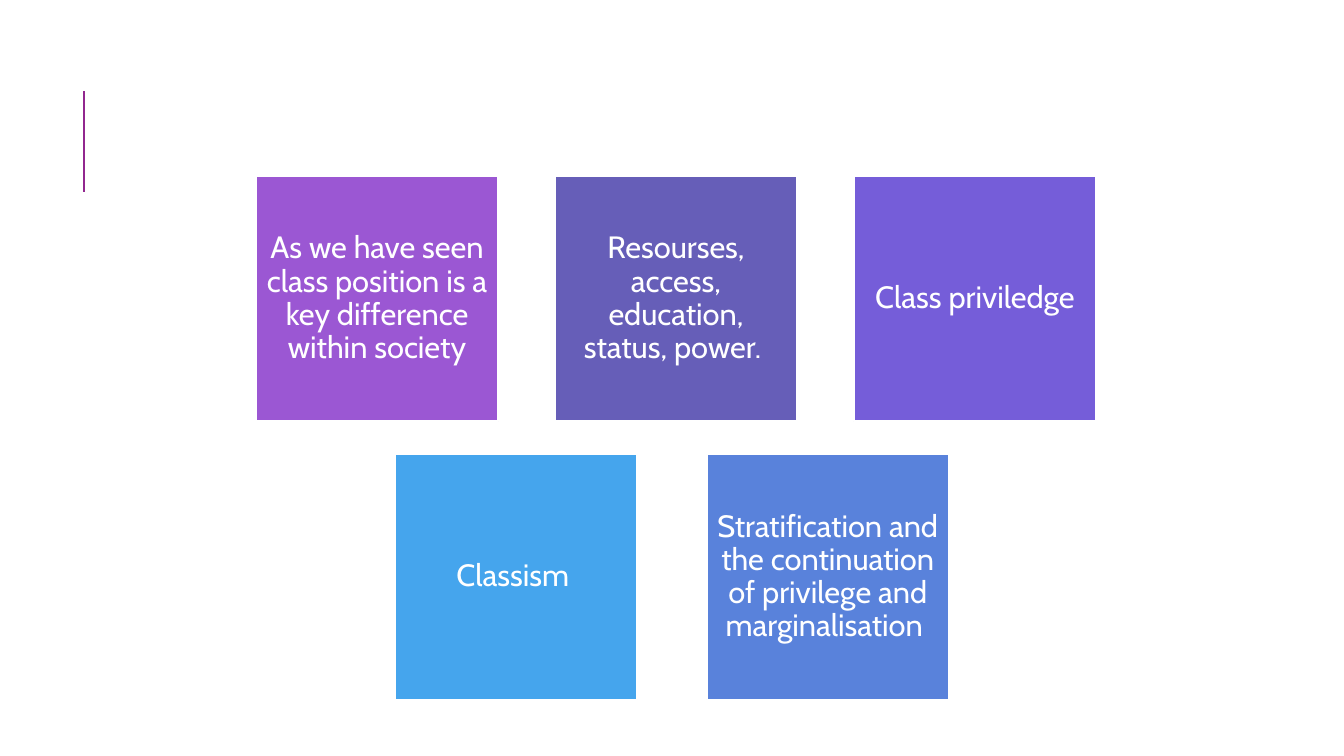
from pptx import Presentation
from pptx import util as u
from pptx.dml.color import RGBColor
from pptx.enum import shapes, text
from pptx.oxml.ns import qn
from lxml import etree

# Each row: left edge, step between tiles, (wording, fill) of each tile
ROWS = [
    (2.54, 2.965, [
        ("As we have seen class position is a key difference within society", "9B57D3"),
        ("Resourses, access, education, status, power. ", "665EB8"),
        ("Class priviledge", "755DD9"),
    ]),
    (3.92, 3.09, [
        ("Classism ", "45A5ED"),
        ("Stratification and the continuation of privilege and marginalisation ", "5982DB"),
    ]),
]
THEME = {"font": "Cabin", "size": 22, "text": "FFFFFF", "edge": "FFFFFF",
         "accent": "92278F", "edge_width": 1.25, "accent_width": 1.5}
TILE_W, TILE_H = 2.4, 2.43
TOP, ROW_STEP = 1.75, 2.76
INSET = 0.09
RULE_X, RULE_TOP, RULE_BOTTOM = 0.83, 0.9, 1.9


def set_all(obj, values):
    for name, value in values.items():
        setattr(obj, name, value)


def set_line(line, colour, width):
    line.color.rgb = RGBColor.from_string(colour)
    line.width = u.Pt(width)


def add_tile(s, x, y, wording, fill):
    sp = s.shapes.add_shape(shapes.MSO_SHAPE.RECTANGLE,
                            *map(u.Inches, (x, y, TILE_W, TILE_H)))
    sp.shadow.inherit = False
    sp.fill.solid()
    sp.fill.fore_color.rgb = RGBColor.from_string(fill)
    set_line(sp.line, THEME["edge"], THEME["edge_width"])
    tf = sp.text_frame
    set_all(tf, {"word_wrap": True, "vertical_anchor": text.MSO_ANCHOR.MIDDLE})
    set_all(tf, {f"margin_{side}": u.Inches(INSET)
                 for side in ("left", "top", "right", "bottom")})
    p = tf.paragraphs[0]
    set_all(p, {"alignment": text.PP_ALIGN.CENTER, "line_spacing": 0.9,
                "space_after": u.Pt(0.35 * THEME["size"])})
    r = p.add_run()
    r.text = wording
    set_all(r.font, {"name": THEME["font"], "size": u.Pt(THEME["size"])})
    r.font.color.rgb = RGBColor.from_string(THEME["text"])


def main():
    prs = Presentation()
    set_all(prs, {"slide_width": u.Inches(13.33), "slide_height": u.Inches(7.5)})
    s = prs.slides.add_slide(prs.slide_layouts.get_by_name("Blank"))

    rule = s.shapes.add_connector(
        shapes.MSO_CONNECTOR.STRAIGHT,
        *map(u.Inches, (RULE_X, RULE_BOTTOM, RULE_X, RULE_TOP)))
    set_line(rule.line, THEME["accent"], THEME["accent_width"])
    etree.SubElement(rule._element.spPr, qn("a:effectLst"))

    for row, (left, step, tiles) in enumerate(ROWS):
        for col, (wording, fill) in enumerate(tiles):
            add_tile(s, left + col * step, TOP + row * ROW_STEP, wording, fill)

    prs.save("out.pptx")


if __name__ == "__main__":
    main()
